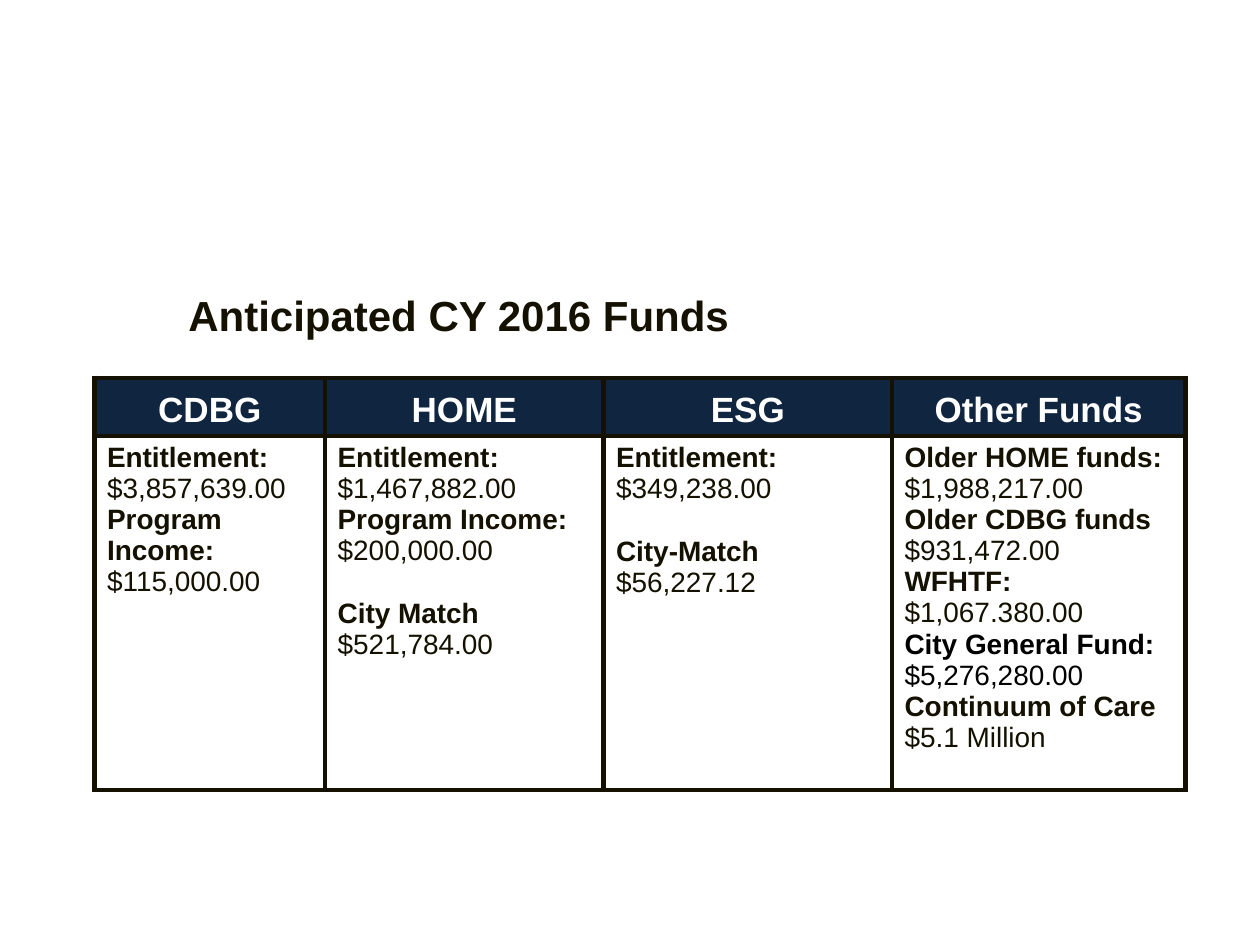
from pptx import Presentation
from pptx.dml.color import RGBColor
from pptx.enum.text import MSO_ANCHOR, PP_ALIGN
from pptx.oxml import parse_xml
from pptx.oxml.ns import nsdecls
from pptx.util import Inches, Pt

COLORS = {"ink": "141100", "black": "000000", "navy": "10253F", "white": "FFFFFF"}
FONT = "Arial"
BORDER_PT = 3
GAP_PT = 18
COL_WIDTHS = [1.83, 2.21, 2.29, 2.33]
ROW_HEIGHTS = [0.46, 2.81]

FUNDS = {
    "CDBG": [
        ("Entitlement:", "$3,857,639.00"),
        ("Program Income:", "$115,000.00"),
    ],
    "HOME": [
        ("Entitlement:", "$1,467,882.00"),
        ("Program Income:", "$200,000.00"),
        ("City Match", "$521,784.00"),
    ],
    "ESG": [
        ("Entitlement:", "$349,238.00"),
        ("City-Match", "$56,227.12"),
    ],
    "Other Funds": [
        ("Older HOME funds:", "$1,988,217.00"),
        ("Older CDBG funds", "$931,472.00"),
        ("WFHTF:", "$1,067.380.00"),
        ("City General Fund:", "$5,276,280.00"),
        ("Continuum of Care", "$5.1 Million"),
    ],
}
SPACED_LABELS = {"City Match", "City-Match"}
BLACK_LABELS = {"City General Fund:"}


def rgb(name):
    return RGBColor.from_string(COLORS[name])


def add_run(p, text, size, color, bold):
    r = p.add_run()
    r.text = text
    r.font.name = FONT
    r.font.size = Pt(size)
    r.font.bold = bold
    r.font.color.rgb = rgb(color)


def add_title(s, text):
    sp = s.shapes.title
    sp.left, sp.top = Inches(0.62), Inches(2.25)
    sp.width, sp.height = Inches(6.04), Inches(0.5)
    tf = sp.text_frame
    tf.word_wrap = True
    tf.vertical_anchor = MSO_ANCHOR.MIDDLE
    p = tf.paragraphs[0]
    p.alignment = PP_ALIGN.CENTER
    add_run(p, text, 24, "ink", True)


def set_borders(cell):
    tc_pr = cell._tc.get_or_add_tcPr()
    for i, side in enumerate(("lnL", "lnR", "lnT", "lnB")):
        tc_pr.insert(i, parse_xml(
            f'<a:{side} {nsdecls("a")} w="{Pt(BORDER_PT)}"><a:solidFill>'
            f'<a:srgbClr val="{COLORS["ink"]}"/></a:solidFill></a:{side}>'))


def fill_header(cell, text):
    cell.fill.solid()
    cell.fill.fore_color.rgb = rgb("navy")
    cell.vertical_anchor = MSO_ANCHOR.BOTTOM
    p = cell.text_frame.paragraphs[0]
    p.alignment = PP_ALIGN.CENTER
    add_run(p, text, 20, "white", True)


def fill_body(cell, entries):
    cell.fill.background()
    cell.vertical_anchor = MSO_ANCHOR.TOP
    tf = cell.text_frame
    for i, (label, amount) in enumerate(entries):
        color = "black" if label in BLACK_LABELS else "ink"
        p = tf.add_paragraph() if i else tf.paragraphs[0]
        if label in SPACED_LABELS:
            p.space_before = Pt(GAP_PT)
        add_run(p, label, 16, color, True)
        add_run(tf.add_paragraph(), amount, 16, color, False)


def add_funds_table(s):
    frame = s.shapes.add_table(
        len(ROW_HEIGHTS), len(COL_WIDTHS), Inches(0.75), Inches(3),
        Inches(sum(COL_WIDTHS)), Inches(sum(ROW_HEIGHTS)))
    table = frame.table
    table.horz_banding = False
    for row, height in zip(table.rows, ROW_HEIGHTS):
        row.height = Inches(height)
    for i, (name, entries) in enumerate(FUNDS.items()):
        table.columns[i].width = Inches(COL_WIDTHS[i])
        fill_header(table.cell(0, i), name)
        fill_body(table.cell(1, i), entries)
    for cell in table.iter_cells():
        set_borders(cell)


def main():
    prs = Presentation()
    prs.slide_width, prs.slide_height = Inches(10), Inches(7.5)
    s = prs.slides.add_slide(prs.slide_layouts[5])
    add_funds_table(s)
    add_title(s, "Anticipated CY 2016 Funds")
    prs.save("out.pptx")


if __name__ == "__main__":
    main()
